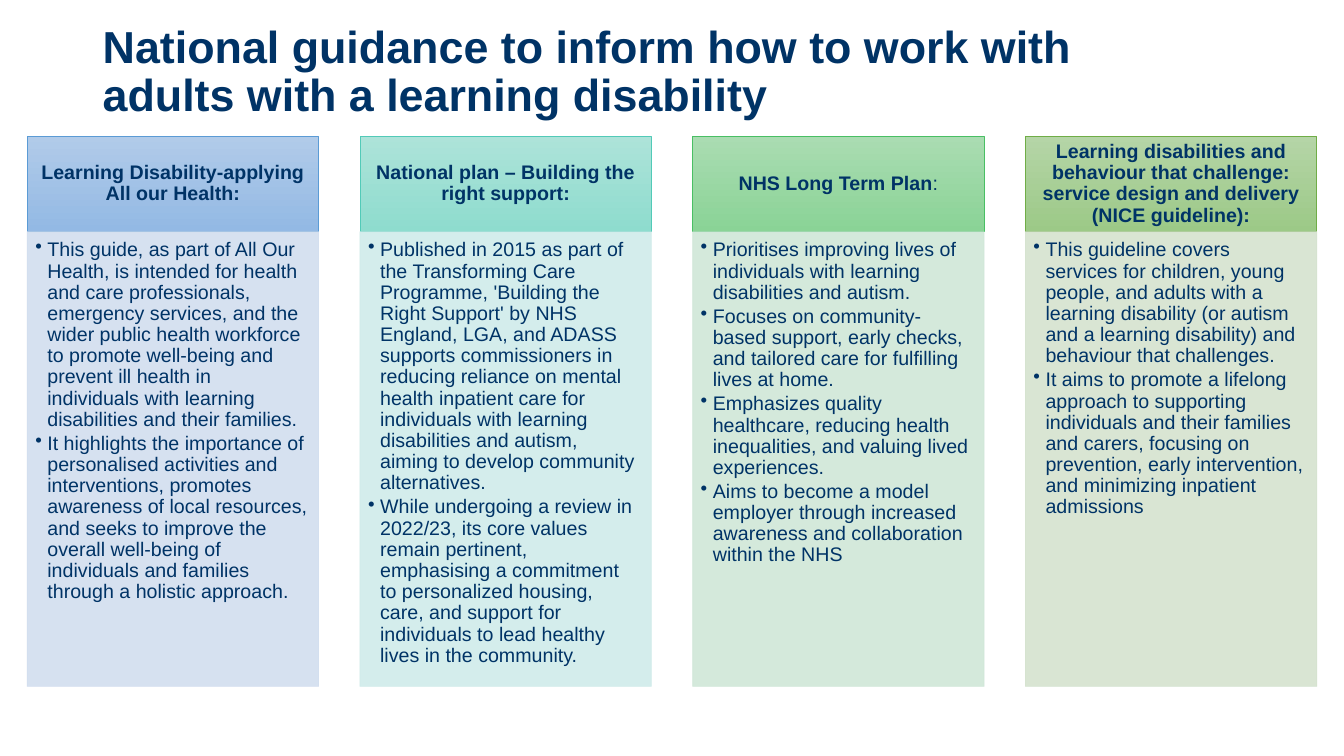
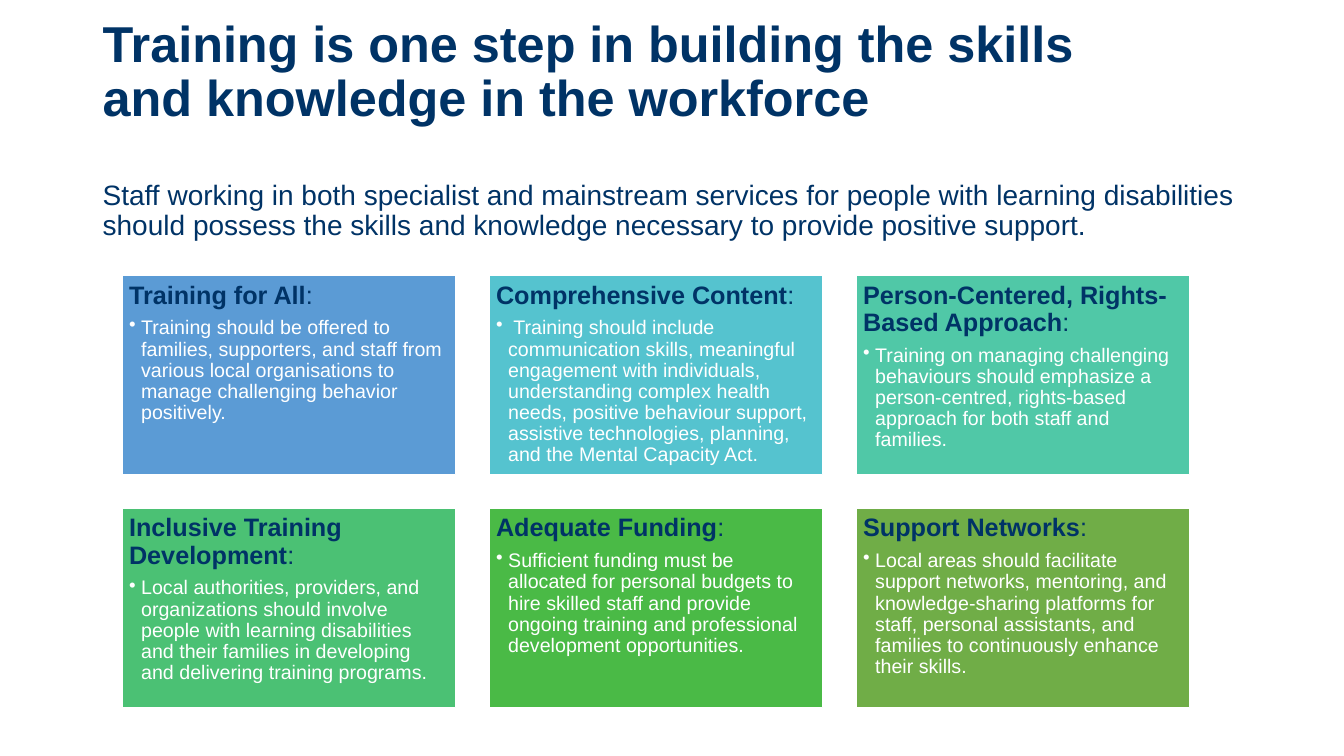
from dataclasses import dataclass

from lxml import etree
from pptx import Presentation
from pptx.dml.color import RGBColor
from pptx.enum.shapes import MSO_SHAPE
from pptx.enum.text import MSO_ANCHOR, PP_ALIGN
from pptx.oxml.ns import qn
from pptx.util import Inches, Pt

RECTANGLE = MSO_SHAPE.RECTANGLE
TOP, MIDDLE = MSO_ANCHOR.TOP, MSO_ANCHOR.MIDDLE
LEFT, CENTER = PP_ALIGN.LEFT, PP_ALIGN.CENTER


@dataclass(frozen=True)
class Theme:
    font: str = "Arial"
    navy: str = "003366"
    white: str = "FFFFFF"
    intro_size: int = 20
    card_heading_size: int = 18
    text_size: int = 14
    line_spacing: float = 0.9
    bullet_gap: int = 2
    heading_gap: int = 6
    bullet_indent: float = 0.12
    panel_opacity: int = 90


THEME = Theme()

GUIDANCE = [
    (("Learning Disability-applying All our Health:", ""),
     ("B1CBE9", "93B9E4"), "5B9BD5", "D2DEEF",
     ["This guide, as part of All Our Health, is intended for health and care professionals, "
      "emergency services, and the wider public health workforce to promote well-being and "
      "prevent ill health in individuals with learning disabilities and their families.",
      "It highlights the importance of personalised activities and interventions, promotes "
      "awareness of local resources, and seeks to improve the overall well-being of individuals "
      "and families through a holistic approach."]),
    (("National plan – Building the right support:", ""),
     ("ADE3D9", "8EDCCE"), "52CAB8", "D0ECEA",
     ["Published in 2015 as part of the Transforming Care Programme, 'Building the Right Support' "
      "by NHS England, LGA, and ADASS supports commissioners in reducing reliance on mental "
      "health inpatient care for individuals with learning disabilities and autism, aiming to "
      "develop community alternatives.",
      "While undergoing a review in 2022/23, its core values remain pertinent, emphasising a "
      "commitment to personalized housing, care, and support for individuals to lead healthy "
      "lives in the community."]),
    (("NHS Long Term Plan", ":"),
     ("AADCB2", "8AD396"), "49BF64", "D0E7D8",
     ["Prioritises improving lives of individuals with learning disabilities and autism.",
      "Focuses on community-based support, early checks, and tailored care for fulfilling lives "
      "at home.",
      "Emphasizes quality healthcare, reducing health inequalities, and valuing lived experiences.",
      "Aims to become a model employer through increased awareness and collaboration within the "
      "NHS"]),
    (("Learning disabilities and behaviour that challenge: service design and delivery "
      "(NICE guideline):", ""),
     ("B5D5A7", "9CC987"), "70AD47", "D5E3CF",
     ["This guideline covers services for children, young people, and adults with a learning "
      "disability (or autism and a learning disability) and behaviour that challenges.",
      "It aims to promote a lifelong approach to supporting individuals and their families and "
      "carers, focusing on prevention, early intervention, and minimizing inpatient admissions"]),
]

TRAINING = [
    ("Training for All", "5B9BD5",
     "Training should be offered to families, supporters, and staff from various local "
     "organisations to manage challenging behavior positively."),
    ("Comprehensive Content", "55C3CF",
     " Training should include communication skills, meaningful engagement with individuals, "
     "understanding complex health needs, positive behaviour support, assistive technologies, "
     "planning, and the Mental Capacity Act."),
    ("Person-Centered, Rights-Based Approach", "50C8A7",
     "Training on managing challenging behaviours should emphasize a person-centred, "
     "rights-based approach for both staff and families."),
    ("Inclusive Training Development", "4BC174",
     "Local authorities, providers, and organizations should involve people with learning "
     "disabilities and their families in developing and delivering training programs."),
    ("Adequate Funding", "4ABA46",
     "Sufficient funding must be allocated for personal budgets to hire skilled staff and "
     "provide ongoing training and professional development opportunities."),
    ("Support Networks", "70AD47",
     "Local areas should facilitate support networks, mentoring, and knowledge-sharing "
     "platforms for staff, personal assistants, and families to continuously enhance their "
     "skills."),
]


def rgb(color):
    return RGBColor.from_string(color)


def style_paragraph(paragraph, size, color, bold=None, align=LEFT, gap=0):
    paragraph.alignment = align
    paragraph.line_spacing = THEME.line_spacing
    paragraph.space_after = Pt(gap)
    font = paragraph.font
    font.name, font.size, font.bold = THEME.font, Pt(size), bold
    font.color.rgb = rgb(color)


def write_heading(paragraph, label, ending, size, align=LEFT, gap=0):
    style_paragraph(paragraph, size, THEME.navy, align=align, gap=gap)
    for words, bold in ((label, True), (ending, False)):
        if words:
            run = paragraph.add_run()
            run.text = words
            run.font.bold = bold


def write_bullet(paragraph, words, color):
    paragraph.text = words
    paragraph.level = 1
    properties = paragraph._p.get_or_add_pPr()
    indent = Inches(THEME.bullet_indent)
    properties.set("marL", str(indent))
    properties.set("indent", str(-indent))
    etree.SubElement(properties, qn("a:buChar")).set("char", "•")
    style_paragraph(paragraph, THEME.text_size, color, gap=THEME.bullet_gap)


def set_up_frame(frame, anchor, insets):
    frame.word_wrap = True
    frame.vertical_anchor = anchor
    (frame.margin_left, frame.margin_top,
     frame.margin_right, frame.margin_bottom) = map(Inches, insets)


def add_words(slide, words, area, size, bold=None, anchor=TOP):
    frame = slide.shapes.add_textbox(*map(Inches, area)).text_frame
    set_up_frame(frame, anchor, (0.1, 0.05, 0.1, 0.05))
    frame.paragraphs[0].text = words
    style_paragraph(frame.paragraphs[0], size, THEME.navy, bold)


def add_title(slide, words, size):
    add_words(slide, words, (0.92, 0, 10.69, 1.45), size, True, MIDDLE)


def add_block(slide, area, border, border_width, insets, anchor=TOP):
    block = slide.shapes.add_shape(RECTANGLE, *map(Inches, area))
    block.shadow.inherit = False
    block.line.color.rgb = rgb(border)
    block.line.width = Pt(border_width)
    set_up_frame(block.text_frame, anchor, insets)
    return block


def fill_solid(block, color):
    block.fill.solid()
    block.fill.fore_color.rgb = rgb(color)


def fill_gradient(block, colors):
    block.fill.gradient()
    block.fill.gradient_angle = 270
    for stop, color in zip(block.fill.gradient_stops, colors):
        stop.color.rgb = rgb(color)


def set_opacity(block, percent):
    for color in block._element.spPr.iter(qn("a:srgbClr")):
        etree.SubElement(color, qn("a:alpha")).set("val", str(percent * 1000))


def add_guidance_column(slide, left, heading, shades, border, tint, points):
    width, top, header_height, panel_height = 2.89, 1.35, 0.95, 4.51
    header = add_block(slide, (left, top, width, header_height), border, 0.5,
                       (0.11, 0.06, 0.11, 0.06), MIDDLE)
    fill_gradient(header, shades)
    write_heading(header.text_frame.paragraphs[0], *heading, THEME.text_size, CENTER)

    panel = add_block(slide, (left, top + header_height, width, panel_height), tint, 0.5,
                      (0.08, 0.08, 0.11, 0.12))
    fill_solid(panel, tint)
    set_opacity(panel, THEME.panel_opacity)
    frame = panel.text_frame
    for index, point in enumerate(points):
        write_bullet(frame.add_paragraph() if index else frame.paragraphs[0], point, THEME.navy)


def add_training_card(slide, left, top, heading, color, point):
    card = add_block(slide, (left, top, 3.31, 1.98), THEME.white, 1, (0.07,) * 4)
    fill_solid(card, color)
    frame = card.text_frame
    write_heading(frame.paragraphs[0], heading, ":", THEME.card_heading_size,
                  gap=THEME.heading_gap)
    write_bullet(frame.add_paragraph(), point, THEME.white)


def build_guidance(slide):
    add_title(slide, "National guidance to inform how to work with adults with a learning "
                     "disability", 32)
    for index, column in enumerate(GUIDANCE):
        add_guidance_column(slide, 0.27 + index * 3.3, *column)


def build_training(slide):
    add_title(slide, "Training is one step in building the skills and knowledge in the "
                     "workforce", 36)
    add_words(slide, "Staff working in both specialist and mainstream services for people with "
                     "learning disabilities should possess the skills and knowledge necessary "
                     "to provide positive support.", (0.92, 1.75, 11.5, 0.85), THEME.intro_size)
    for index, card in enumerate(TRAINING):
        row, column = divmod(index, 3)
        add_training_card(slide, 1.21 + column * 3.64, 2.73 + row * 2.31, *card)


def main():
    deck = Presentation()
    deck.slide_width, deck.slide_height = Inches(13.33), Inches(7.5)
    blank = deck.slide_layouts[6]
    for build in (build_guidance, build_training):
        build(deck.slides.add_slide(blank))
    deck.save("out.pptx")


if __name__ == "__main__":
    main()
